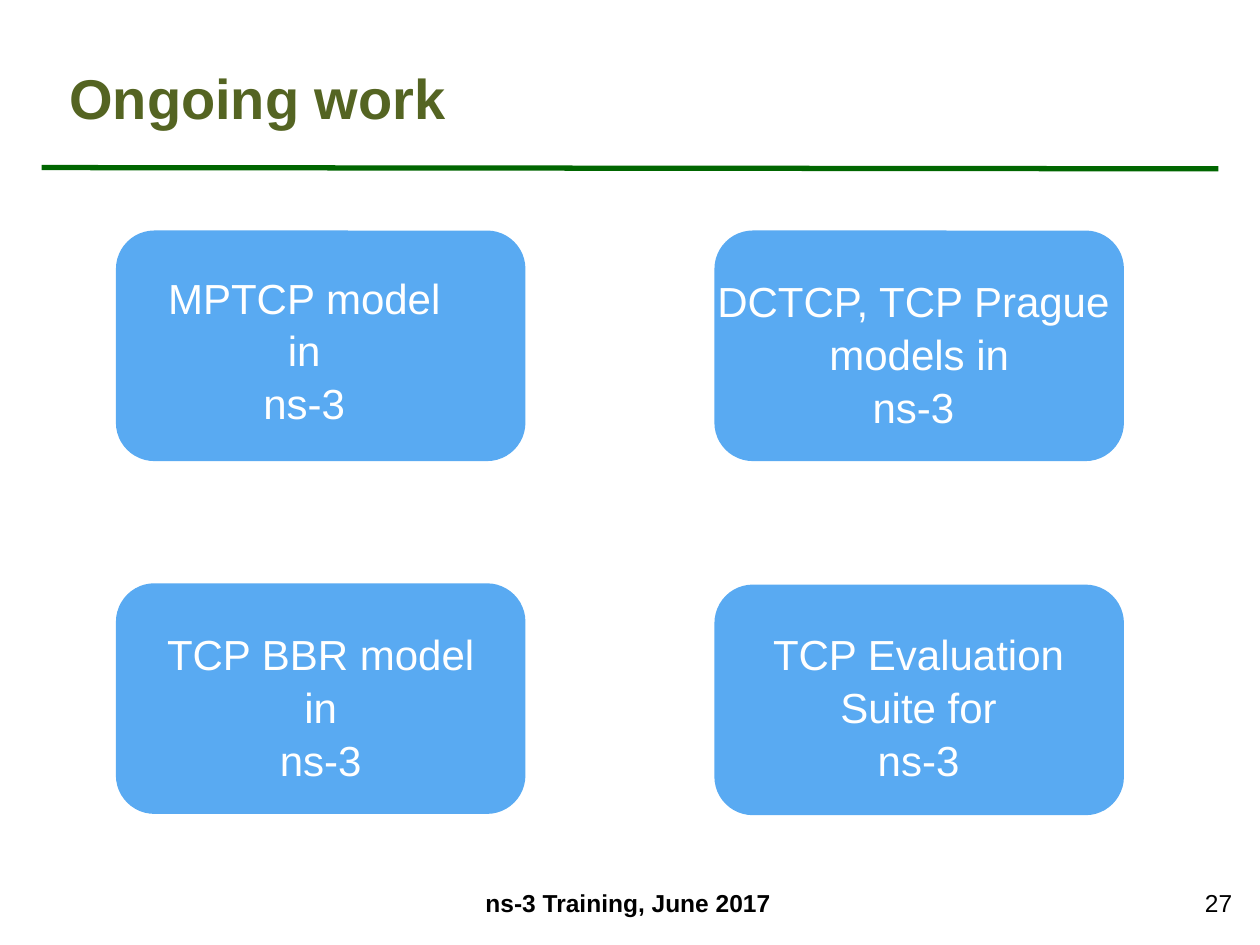
"""Build the ongoing work slide."""
import pptx
import pptx.dml.color
import pptx.enum.shapes
import pptx.enum.text
import pptx.oxml.ns
import pptx.util
from lxml import etree

Inches = pptx.util.Inches
ALIGN = pptx.enum.text.PP_ALIGN
ANCHOR = pptx.enum.text.MSO_ANCHOR

CARD_WIDTH, CARD_HEIGHT = 3.25, 1.83
CARDS = [(0.92, 1.83), (5.67, 1.83), (0.92, 4.63), (5.67, 4.64)]
LABELS = [
    (1.23, 2.09, 2.37, "MPTCP model\nin\nns-3"),
    (5.59, 2.12, 3.41, "DCTCP, TCP Prague \nmodels in\nns-3 "),
    (1.22, 4.92, 2.65, "TCP BBR model\nin\nns-3"),
    (6.03, 4.92, 2.52, "TCP Evaluation\nSuite for\nns-3"),
]


def rgb(value):
    """Turn a hex string into a colour."""
    return pptx.dml.color.RGBColor.from_string(value)


def write_text(box, text, size, color, align, bold=False, wrap=True, spacing=1.0):
    """Fill a box with evenly formatted paragraphs."""
    frame = box.text_frame
    frame.text = text
    frame.word_wrap = wrap
    frame.margin_left = frame.margin_right = Inches(0.05)
    frame.margin_top = frame.margin_bottom = Inches(0.05)
    for para in frame.paragraphs:
        para.alignment = align
        para.line_spacing = spacing
        for span in para.runs:
            span.font.name = "Arial"
            span.font.size = pptx.util.Pt(size)
            span.font.bold = bold
            span.font.color.rgb = rgb(color)


def add_title(page, text):
    """Place and format the title placeholder."""
    title = page.shapes.title
    title.left, title.top = Inches(0.5), Inches(0.3)
    title.width, title.height = Inches(8.97), Inches(0.94)
    write_text(title, text, 32, "546422", ALIGN.LEFT, bold=True)
    title.text_frame.vertical_anchor = ANCHOR.MIDDLE


def add_rule(page):
    """Draw the green rule below the title."""
    rule = page.shapes.add_connector(
        pptx.enum.shapes.MSO_CONNECTOR.STRAIGHT,
        Inches(0.33), Inches(1.33), Inches(9.67), Inches(1.34))
    rule.line.color.rgb = rgb("006600")
    rule.line.width = pptx.util.Pt(3)
    properties = rule.element.find(pptx.oxml.ns.qn("p:spPr"))
    etree.SubElement(properties, pptx.oxml.ns.qn("a:effectLst"))


def add_card(page, left, top):
    """Draw one rounded blue card."""
    card = page.shapes.add_shape(
        pptx.enum.shapes.MSO_SHAPE.ROUNDED_RECTANGLE,
        Inches(left), Inches(top), Inches(CARD_WIDTH), Inches(CARD_HEIGHT))
    card.shadow.inherit = False
    card.fill.solid()
    card.fill.fore_color.rgb = rgb("59AAF2")
    card.line.fill.background()


def add_label(page, left, top, width, height, text, size, color, align, **style):
    """Add a text box in one style."""
    box = page.shapes.add_textbox(
        Inches(left), Inches(top), Inches(width), Inches(height))
    write_text(box, text, size, color, align, **style)


def main():
    """Build and save the deck."""
    deck = pptx.Presentation()
    deck.slide_width, deck.slide_height = Inches(10), Inches(7.5)
    page = deck.slides.add_slide(deck.slide_layouts[5])
    add_rule(page)
    add_title(page, "Ongoing work")
    for left, top in CARDS:
        add_card(page, left, top)
    for left, top, width, text in LABELS:
        add_label(page, left, top, width, 1.26, text, 24, "FFFFFF",
                  ALIGN.CENTER, wrap=False, spacing=1.05)
    add_label(page, 3.42, 7, 3.13, 0.32, "ns-3 Training, June 2017", 14,
              "000000", ALIGN.CENTER, bold=True)
    add_label(page, 9.5, 7, 0.33, 0.32, "27", 14, "000000", ALIGN.RIGHT, wrap=False)
    deck.save("out.pptx")


if __name__ == "__main__":
    main()
